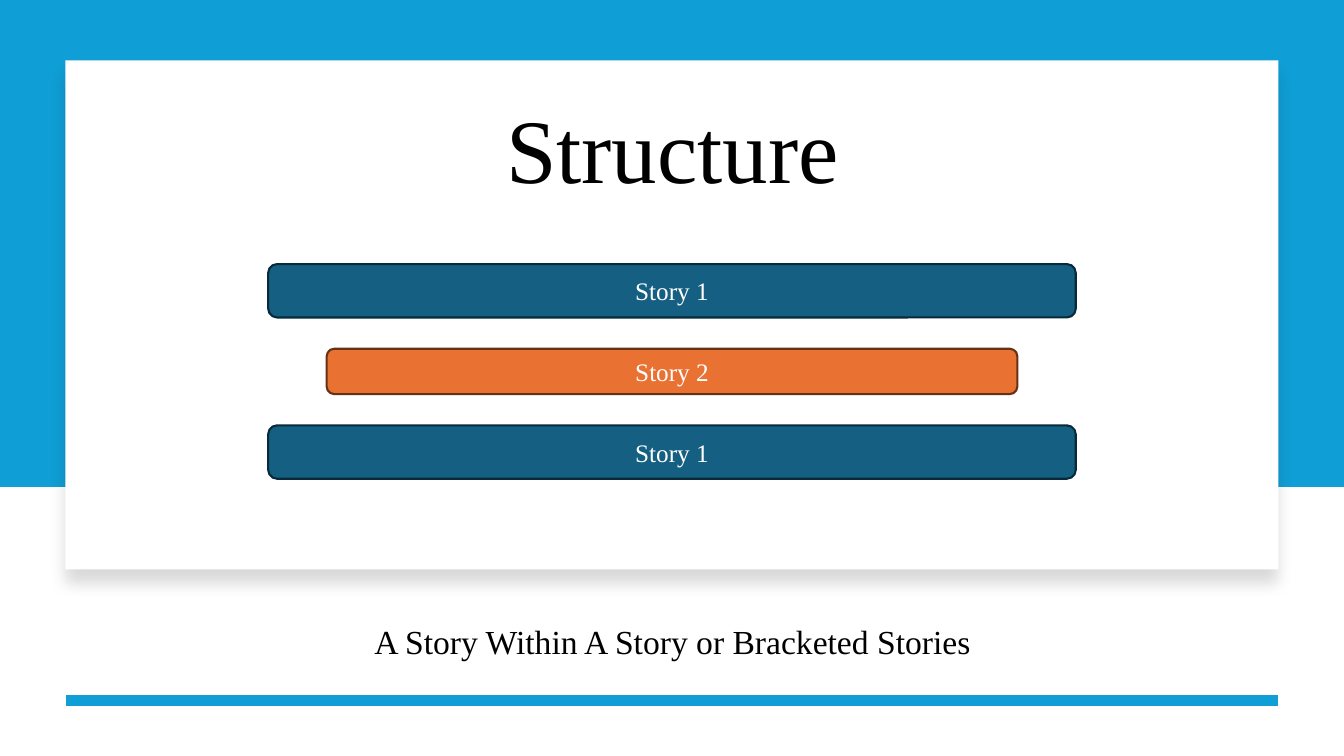
from lxml import etree
from pptx import Presentation
from pptx.dml.color import RGBColor
from pptx.enum.shapes import MSO_CONNECTOR, MSO_SHAPE
from pptx.enum.text import MSO_ANCHOR, PP_ALIGN
from pptx.oxml.ns import qn
from pptx.util import Inches, Pt

RECT, ROUND = MSO_SHAPE.RECTANGLE, MSO_SHAPE.ROUNDED_RECTANGLE
STRAIGHT = MSO_CONNECTOR.STRAIGHT
CENTER, MIDDLE = PP_ALIGN.CENTER, MSO_ANCHOR.MIDDLE

COLORS = {"sky": "0F9ED5", "white": "FFFFFF", "black": "000000",
          "blue": "156082", "blue_edge": "092A39",
          "orange": "E97132", "orange_edge": "663216"}
FONT = "Times New Roman"
SLIDE_W, SLIDE_H = 13.33, 7.5


def rgb(name):
    return RGBColor.from_string(COLORS[name])


def write(sp, text, size, color, **para_format):
    """Put one centred line of text in a shape."""
    tf = sp.text_frame
    tf.word_wrap = True
    tf.vertical_anchor = MIDDLE
    p = tf.paragraphs[0]
    for name, value in {"alignment": CENTER, **para_format}.items():
        setattr(p, name, value)
    r = p.add_run()
    r.text = text
    for name, value in {"name": FONT, "size": Pt(size)}.items():
        setattr(r.font, name, value)
    r.font.color.rgb = rgb(color)


def add_box(slide, kind, box, fill, edge=None):
    sp = slide.shapes.add_shape(kind, *map(Inches, box))
    sp.shadow.inherit = False
    sp.fill.solid()
    sp.fill.fore_color.rgb = rgb(fill)
    if edge:
        sp.line.color.rgb = rgb(edge)
        sp.line.width = Pt(1.5)
    else:
        sp.line.fill.background()
    return sp


def add_text(slide, box, text, size, **para_format):
    sp = slide.shapes.add_textbox(*map(Inches, box))
    write(sp, text, size, "black", line_spacing=0.9, **para_format)


def add_soft_shadow(sp):
    """Cast a faint shadow straight down."""
    effects = sp._element.spPr.find(qn("a:effectLst"))
    shadow = etree.SubElement(effects, qn("a:outerShdw"), blurRad=str(Pt(11)),
                              dist=str(Pt(10)), dir="5400000", algn="t",
                              rotWithShape="0")
    color = etree.SubElement(shadow, qn("a:srgbClr"), val=COLORS["black"])
    etree.SubElement(color, qn("a:alpha"), val="15000")


def add_backdrop(slide, box):
    x, y, w, h = box
    # Blue band and white card
    add_box(slide, RECT, (0, 0, SLIDE_W, 4.83), "sky")
    add_soft_shadow(add_box(slide, RECT, (x, y, w, 5.05), "white"))
    # Rule at the foot
    line = slide.shapes.add_connector(
        STRAIGHT, *map(Inches, (x + w, y + h, x, y + h)))
    line.line.color.rgb = rgb("sky")
    line.line.width = Pt(8)
    etree.SubElement(line._element.spPr, qn("a:effectLst"))


def add_story_bars(slide, box):
    """Stack the bars with equal gaps; the inner story is inset."""
    x, y, w, h = box
    bars = [("Story 1", "blue", 0, 0.53),
            ("Story 2", "orange", 0.58, 0.45),
            ("Story 1", "blue", 0, 0.53)]
    gap = (h - sum(bar[3] for bar in bars)) / (len(bars) - 1)
    for text, color, inset, height in bars:
        sp = add_box(slide, ROUND, (x + inset, y, w - 2 * inset, height),
                     color, color + "_edge")
        write(sp, text, 18, "white")
        y += height + gap


def main():
    prs = Presentation()
    prs.slide_width, prs.slide_height = Inches(SLIDE_W), Inches(SLIDE_H)
    slide = prs.slides.add_slide(prs.slide_layouts[6])
    add_backdrop(slide, (0.65, 0.6, 12.03, 6.35))
    add_text(slide, (1.67, 0.97, 10, 1.12), "Structure", 64.8)
    add_text(slide, (1.67, 6.03, 10, 0.71),
             "A Story Within A Story or Bracketed Stories", 24,
             space_before=Pt(10))
    add_story_bars(slide, (2.66, 2.62, 8.01, 2.13))
    prs.save("out.pptx")


if __name__ == "__main__":
    main()
